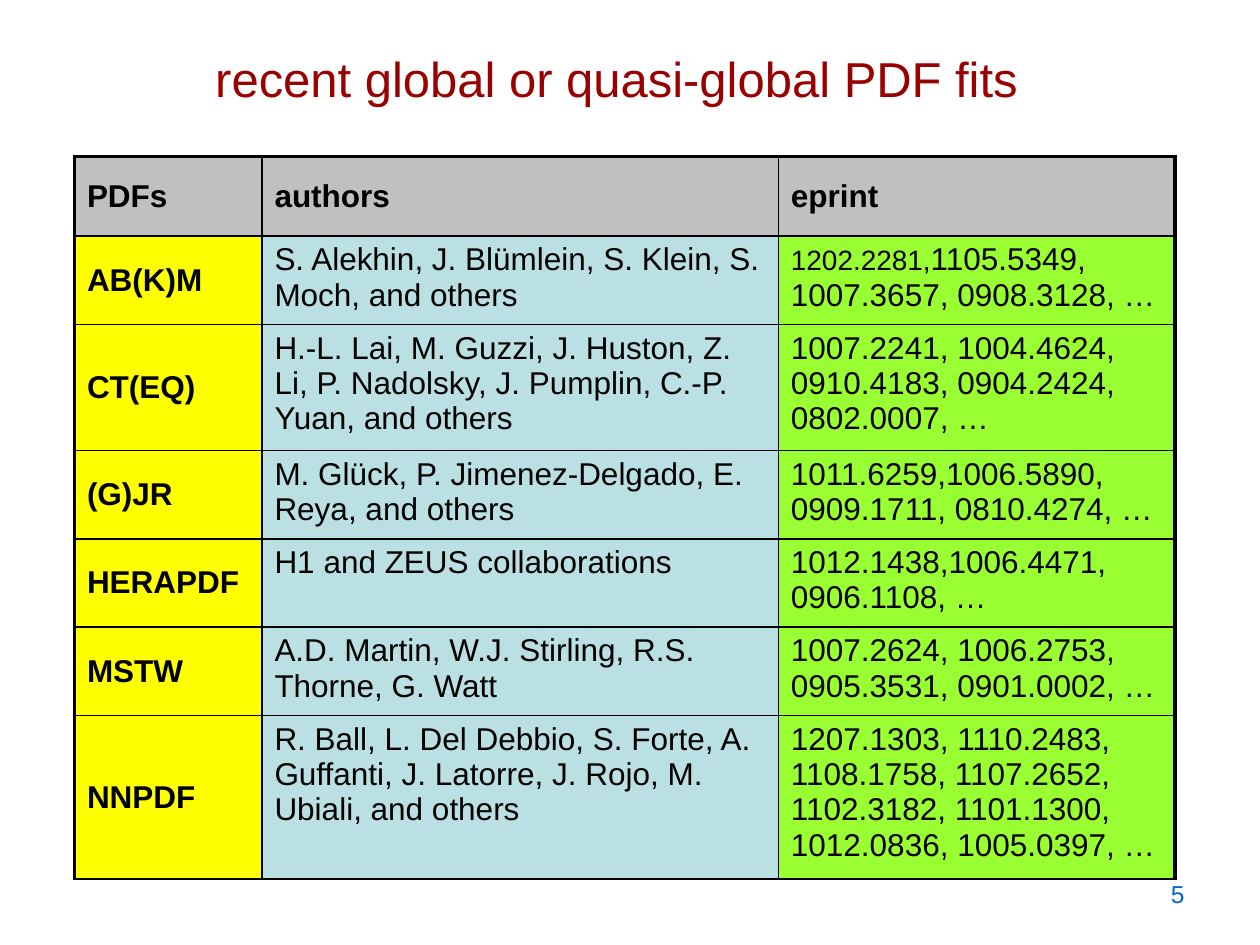
import lxml.etree
import pptx
import pptx.dml.color
import pptx.enum.text
import pptx.oxml.ns
import pptx.util

Cm = pptx.util.Cm
Pt = pptx.util.Pt
ALIGN = pptx.enum.text.PP_ALIGN
ANCHOR = pptx.enum.text.MSO_ANCHOR


def add_run(paragraph, text, size, color, bold=False):
    run = paragraph.add_run()
    run.text = text
    run.font.name = "Arial"
    run.font.size = Pt(size)
    run.font.bold = bold
    run.font.color.rgb = pptx.dml.color.RGBColor.from_string(color)


def add_border(cell, side, width):
    """Draw a black line on one side (L, R, T or B) of a table cell."""
    qn = pptx.oxml.ns.qn
    properties = cell._tc.get_or_add_tcPr()
    line = lxml.etree.SubElement(properties, qn(f"a:ln{side}"), w=str(Pt(width)))
    fill = lxml.etree.SubElement(line, qn("a:solidFill"))
    lxml.etree.SubElement(fill, qn("a:srgbClr"), val="000000")


presentation = pptx.Presentation()
presentation.slide_width = Cm(25.4)
presentation.slide_height = Cm(19.05)
slide = presentation.slides.add_slide(presentation.slide_layouts[6])

# Page number
page_number = slide.shapes.add_textbox(Cm(18.21), Cm(17.35), Cm(5.92), Cm(1.32))
page_number.text_frame.word_wrap = True
page_number.text_frame.vertical_anchor = ANCHOR.MIDDLE
paragraph = page_number.text_frame.paragraphs[0]
paragraph.alignment = ALIGN.RIGHT
add_run(paragraph, "5", 14, "0066CC")

# Table of fits: each cell is a list of (text, size) runs
rows = [
    ("PDFs", "authors", [("eprint", 18)]),
    ("AB(K)M", "S. Alekhin, J. Blümlein, S. Klein, S. Moch, and others",
     [("1202.2281,", 16), ("1105.5349, 1007.3657, 0908.3128, …", 18)]),
    ("CT(EQ)",
     "H.-L. Lai, M. Guzzi, J. Huston, Z. Li, P. Nadolsky, J. Pumplin, "
     "C.-P. Yuan, and others",
     [("1007.2241, 1004.4624, 0910.4183, 0904.2424, 0802.0007, …", 18)]),
    ("(G)JR", "M. Glück, P. Jimenez-Delgado, E. Reya, and others",
     [("1011.6259,1006.5890, 0909.1711, 0810.4274, …", 18)]),
    ("HERAPDF", "H1 and ZEUS collaborations",
     [("1012.1438,1006.4471, 0906.1108, …", 18)]),
    ("MSTW", "A.D. Martin, W.J. Stirling, R.S. Thorne, G. Watt",
     [("1007.2624, 1006.2753, 0905.3531, 0901.0002, …", 18)]),
    ("NNPDF",
     "R. Ball, L. Del Debbio, S. Forte, A. Guffanti, J. Latorre, J. Rojo, "
     "M. Ubiali, and others",
     [("1207.1303, 1110.2483, 1108.1758, 1107.2652, 1102.3182, 1101.1300, "
       "1012.0836, 1005.0397, …", 18)]),
]
column_widths = [3.78, 10.41, 8.0]
row_heights = [1.61, 1.78, 2.54, 1.78, 1.78, 1.78, 3.3]
column_colors = ["FFFF00", "BBE0E3", "99FF33"]
header_color = "C0C0C0"

table = slide.shapes.add_table(
    len(rows), len(column_widths), Cm(1.5), Cm(3.15),
    Cm(sum(column_widths)), Cm(sum(row_heights))).table
for column, width in zip(table.columns, column_widths):
    column.width = Cm(width)

for row_index, (name, authors, references) in enumerate(rows):
    table.rows[row_index].height = Cm(row_heights[row_index])
    contents = [[(name, 18)], [(authors, 18)], references]
    for column_index, runs in enumerate(contents):
        cell = table.cell(row_index, column_index)
        is_header = row_index == 0
        is_heading = is_header or column_index == 0

        add_border(cell, "L", 2.25 if column_index == 0 else 1)
        add_border(cell, "R", 2.25 if column_index == 2 else 1)
        add_border(cell, "T", 2.25 if is_header else 1)
        add_border(cell, "B", 1)
        cell.fill.solid()
        cell.fill.fore_color.rgb = pptx.dml.color.RGBColor.from_string(
            header_color if is_header else column_colors[column_index])

        cell.vertical_anchor = ANCHOR.MIDDLE if is_heading else ANCHOR.TOP
        paragraph = cell.text_frame.paragraphs[0]
        paragraph.space_before = Pt(2)
        for text, size in runs:
            add_run(paragraph, text, size, "000000", is_heading)

# Title
title = slide.shapes.add_textbox(Cm(4.09), Cm(0.86), Cm(16.89), Cm(1.45))
title.text_frame.word_wrap = False
add_run(title.text_frame.paragraphs[0],
        "recent global or quasi-global PDF fits", 28, "990000")

presentation.save("out.pptx")
